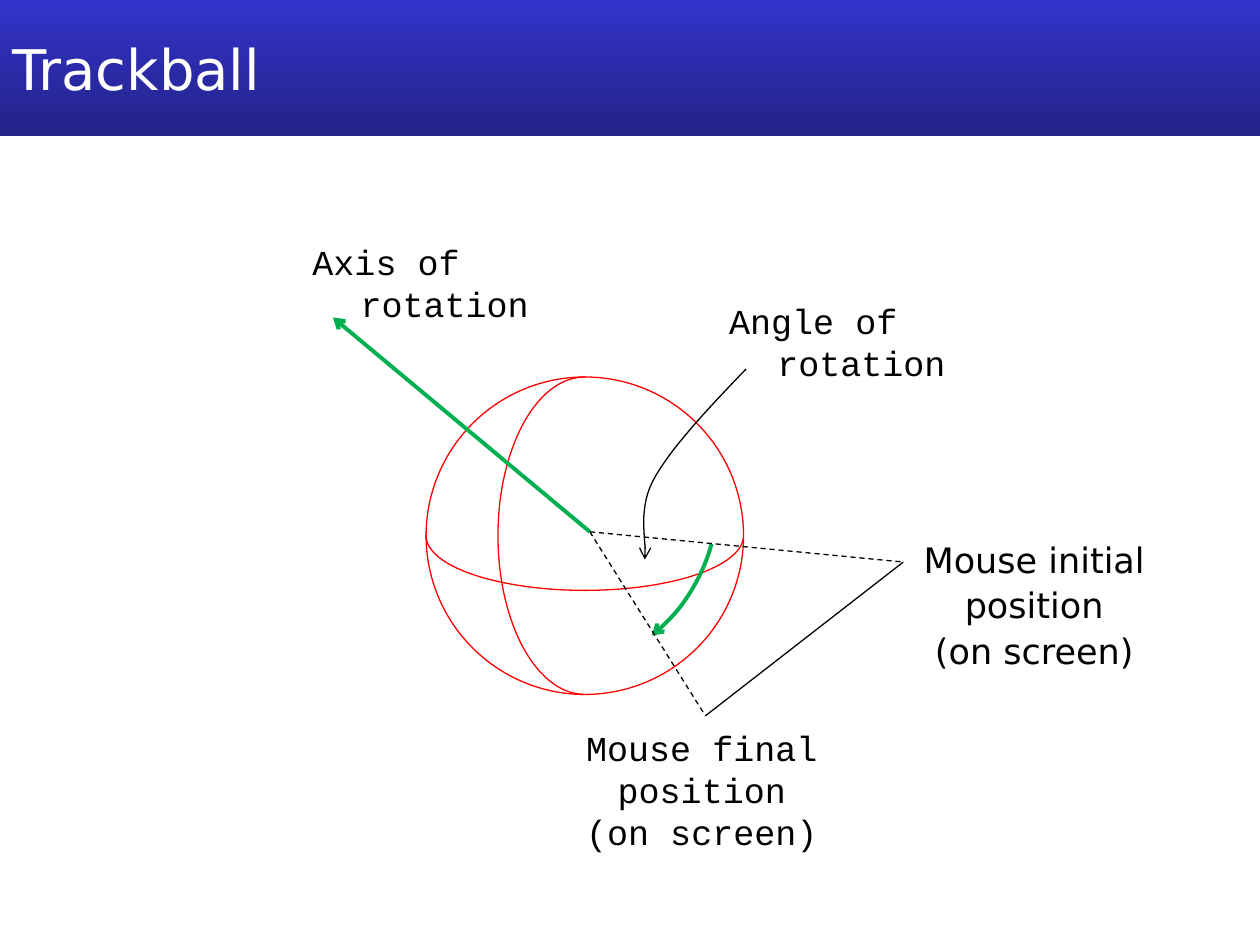
from lxml import etree
from pptx import Presentation
from pptx.dml.color import RGBColor
from pptx.enum.dml import MSO_LINE
from pptx.enum.shapes import MSO_CONNECTOR, MSO_SHAPE
from pptx.enum.text import MSO_ANCHOR, PP_ALIGN
from pptx.oxml.ns import qn
from pptx.util import Cm, Pt

STRAIGHT = MSO_CONNECTOR.STRAIGHT
OVAL, ARC = MSO_SHAPE.OVAL, MSO_SHAPE.ARC
DASH = MSO_LINE.DASH
LEFT, CENTER = PP_ALIGN.LEFT, PP_ALIGN.CENTER
SANS, MONO = "DejaVu Sans", "Courier New"
BLACK, WHITE, RED, GREEN = "000000", "FFFFFF", "FF0000", "00B050"
BAR = ["3333CC", "232388"]

TITLE = "Trackball"
LABELS = [
    (["Mouse initial", "position", "(on screen)"], 18.21, 10.82, SANS, CENTER, 0.9, 4.6),
    (["Mouse final", "position", "(on screen)"], 11.51, 14.53, MONO, CENTER, 1, 0),
    (["Axis of rotation"], 6.05, 4.72, MONO, LEFT, 1, 0),
    (["Angle of rotation"], 14.45, 5.92, MONO, LEFT, 1, 0),
]
SPHERE, SWEEP = (11.79, 10.8), (10.87, 10.01)
DIAMETER = 6.4
HALF, SHORT = (54.38, 162.23), (63.2, 84.58)
ROUNDS = [
    (OVAL, SPHERE, DIAMETER, DIAMETER, 0, (), RED, 0.75, False),
    (ARC, SPHERE, 3.5, DIAMETER, 0, HALF, RED, 0.75, False),
    (ARC, SPHERE, 2.2, DIAMETER, 270, HALF, RED, 0.75, False),
    (ARC, SWEEP, 7.21, 7.21, 270, SHORT, GREEN, 2.25, True),
]
ORIGIN, INITIAL, FINAL, AXIS = (11.89, 10.72), (18.21, 11.33), (14.22, 14.43), (6.71, 6.4)
LINES = [
    (ORIGIN, FINAL, BLACK, 0.75, DASH, False),
    (ORIGIN, INITIAL, BLACK, 0.75, DASH, False),
    (ORIGIN, AXIS, GREEN, 2.25, None, True),
    (INITIAL, FINAL, BLACK, 0.75, None, False),
]
POINTER = [
    [(15.04, 7.44), (14.25, 8.26), (13.49, 9.07), (13.16, 9.7)],
    [(13.16, 9.7), (12.83, 10.34), (13.06, 11.02), (13, 11.28)],
]
STEPS = 16


def rgb(value):
    return RGBColor.from_string(value)


def style_line(shape, color, width, arrow=False, dash=None):
    shape.line.color.rgb = rgb(color)
    shape.line.width = Pt(width)
    if dash:
        shape.line.dash_style = dash
    if arrow:
        ln = shape.line._get_or_add_ln()
        etree.SubElement(ln, qn("a:tailEnd"), type="arrow")


def style_run(r, font, size, color):
    r.font.name = font
    r.font.size = Pt(size)
    r.font.color.rgb = rgb(color)


def add_title(s):
    sp = s.shapes.title
    sp.left, sp.top, sp.width, sp.height = 0, 0, Cm(25.4), Cm(2.74)
    sp.fill.gradient()
    sp.fill.gradient_angle = 270
    for stop, color in zip(sp.fill.gradient_stops, BAR):
        stop.color.rgb = rgb(color)
    tf = sp.text_frame
    tf.text = TITLE
    tf.vertical_anchor = MSO_ANCHOR.MIDDLE
    p = tf.paragraphs[0]
    p.alignment = LEFT
    style_run(p.runs[0], SANS, 32, WHITE)


def add_round(s, kind, center, w, h, rotation, angles, color, width, arrow):
    x, y = center
    sp = s.shapes.add_shape(kind, Cm(x - w / 2), Cm(y - h / 2), Cm(w), Cm(h))
    sp.shadow.inherit = False
    sp.fill.background()
    sp.rotation = rotation
    for i, angle in enumerate(angles):
        sp.adjustments[i] = angle
    style_line(sp, color, width, arrow)


def add_line(s, start, end, color, width, dash, arrow):
    cx = s.shapes.add_connector(STRAIGHT, *map(Cm, start + end))
    style_line(cx, color, width, arrow, dash)
    etree.SubElement(cx._element.spPr, qn("a:effectLst"))


def bezier(points, t):
    weights = [(1 - t) ** 3, 3 * t * (1 - t) ** 2, 3 * t * t * (1 - t), t ** 3]
    return tuple(Cm(sum(w * p[axis] for w, p in zip(weights, points))) for axis in (0, 1))


def add_pointer(s):
    route = [bezier(c, i / STEPS) for c in POINTER for i in range(1, STEPS + 1)]
    fb = s.shapes.build_freeform(*bezier(POINTER[0], 0))
    fb.add_line_segments(route, close=False)
    sp = fb.convert_to_shape()
    sp.shadow.inherit = False
    sp.fill.background()
    style_line(sp, BLACK, 0.75, True)


def add_label(s, texts, x, y, font, align, spacing, before):
    tf = s.shapes.add_textbox(Cm(x), Cm(y), Cm(5.28), Cm(2.36)).text_frame
    tf.word_wrap = True
    for i, text in enumerate(texts):
        p = tf.add_paragraph() if i else tf.paragraphs[0]
        p.text = text
        p.alignment = align
        p.line_spacing = spacing
        p.space_before = Pt(before if i else 0)
        pPr = p._p.get_or_add_pPr()
        pPr.set("marL", str(Cm(0.97)))
        pPr.set("indent", str(-Cm(0.97)))
        style_run(p.runs[0], font, 20, BLACK)


def main():
    prs = Presentation()
    prs.slide_width, prs.slide_height = Cm(25.4), Cm(19.05)
    s = prs.slides.add_slide(prs.slide_layouts[5])
    add_title(s)
    for item in ROUNDS:
        add_round(s, *item)
    for item in LINES:
        add_line(s, *item)
    add_pointer(s)
    for item in LABELS:
        add_label(s, *item)
    prs.save("out.pptx")


if __name__ == "__main__":
    main()
